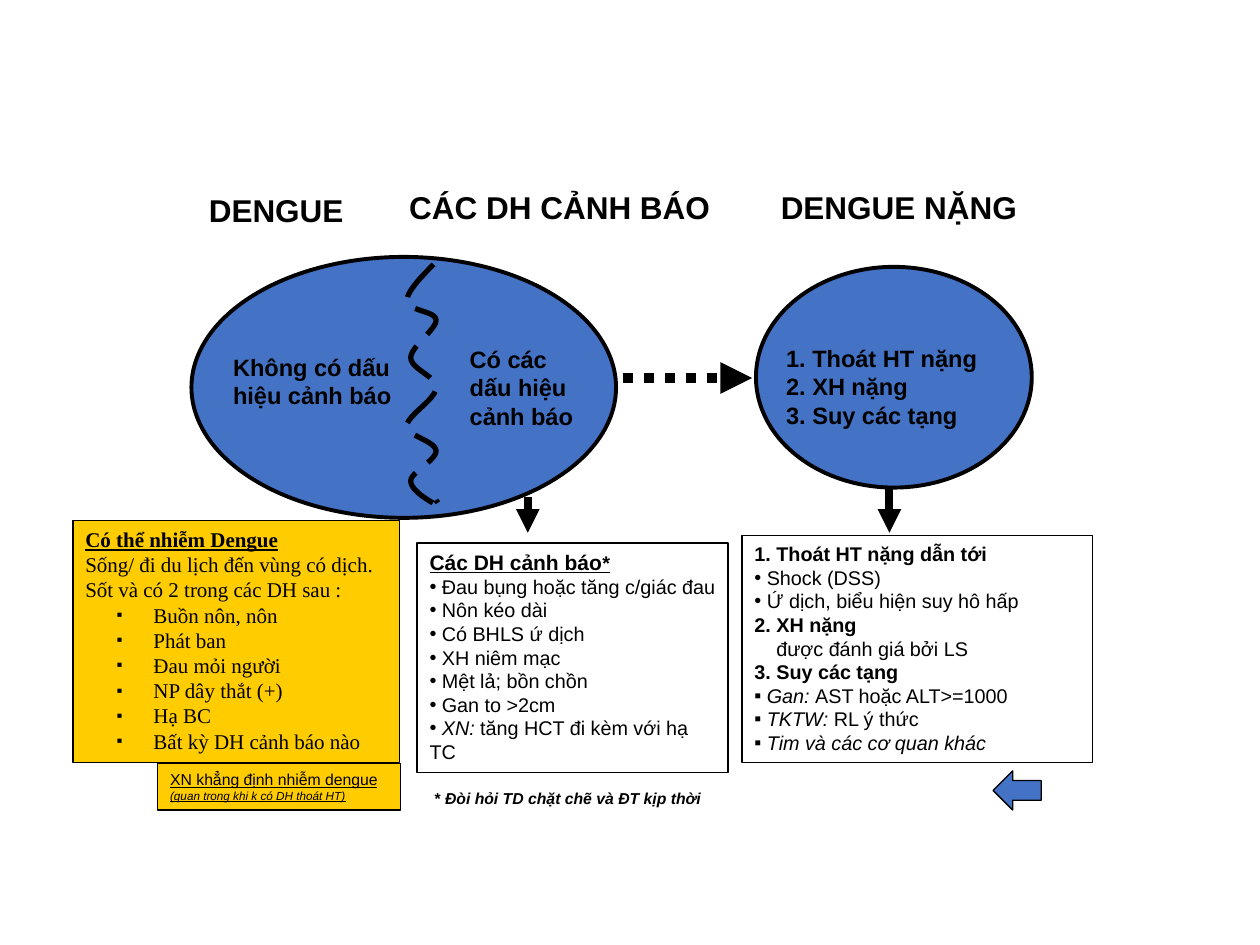
import lxml.etree
import pptx
import pptx.dml.color
import pptx.enum.dml
import pptx.enum.shapes
import pptx.enum.text
import pptx.oxml
import pptx.oxml.ns
import pptx.util

Cm = pptx.util.Cm
Pt = pptx.util.Pt
MSO_SHAPE = pptx.enum.shapes.MSO_SHAPE
LINE_DASH = pptx.enum.dml.MSO_LINE
BLACK = pptx.dml.color.RGBColor(0x00, 0x00, 0x00)
BLUE = pptx.dml.color.RGBColor(0x44, 0x72, 0xC4)
YELLOW = pptx.dml.color.RGBColor(0xFF, 0xCC, 0x00)

PLAIN = {}
BOLD = {"bold": True}
ITALIC = {"italic": True}
HEADING = {"bold": True, "underline": True, "size": Pt(12)}


def write_text(shape, paragraphs, base, wrap=True):
    """Each paragraph is (bullet, left margin, first-line indent, runs)."""
    frame = shape.text_frame
    frame.word_wrap = wrap
    frame.auto_size = pptx.enum.text.MSO_AUTO_SIZE.SHAPE_TO_FIT_TEXT
    frame.vertical_anchor = pptx.enum.text.MSO_ANCHOR.TOP
    for index, (bullet, margin, indent, runs) in enumerate(paragraphs):
        paragraph = frame.paragraphs[0] if index == 0 else frame.add_paragraph()
        paragraph.alignment = pptx.enum.text.PP_ALIGN.LEFT
        properties = paragraph._p.get_or_add_pPr()
        properties.set("marL", str(Cm(margin)))
        properties.set("indent", str(Cm(indent)))
        if bullet:
            if margin:
                size = lxml.etree.SubElement(properties, pptx.oxml.ns.qn("a:buSzPct"))
                size.set("val", "80000")
            font = lxml.etree.SubElement(properties, pptx.oxml.ns.qn("a:buFont"))
            font.set("typeface", "Arial")
            mark = lxml.etree.SubElement(properties, pptx.oxml.ns.qn("a:buChar"))
            mark.set("char", bullet)
        for text, changes in runs:
            run = paragraph.add_run()
            run.text = text
            run.font.color.rgb = BLACK
            for name, value in {**base, **changes}.items():
                setattr(run.font, name, value)


def add_outlined(kind, box, fill, width):
    shape = slide.shapes.add_shape(kind, *map(Cm, box))
    shape.shadow.inherit = False
    if fill is None:
        shape.fill.background()
    else:
        shape.fill.solid()
        shape.fill.fore_color.rgb = fill
    shape.line.color.rgb = BLACK
    shape.line.width = Pt(width)
    return shape


presentation = pptx.Presentation()
presentation.slide_width = Cm(25.4)
presentation.slide_height = Cm(19.05)
slide = presentation.slides.add_slide(presentation.slide_layouts[6])

# Ellipses for dengue and severe dengue
for box in [(3.86, 5.18, 8.56, 5.26), (15.24, 5.38, 5.56, 4.45)]:
    add_outlined(MSO_SHAPE.OVAL, box, BLUE, 2.25)

# Wavy divider: cubic curves as (control, control, end)
start = (8.74, 5.33)
curves = [
    ((8.46, 5.61), (8.2, 5.89), (8.2, 6.07)),
    ((8.23, 6.27), (8.79, 6.27), (8.79, 6.45)),
    ((8.81, 6.63), (8.28, 6.99), (8.28, 7.21)),
    ((8.28, 7.44), (8.81, 7.59), (8.79, 7.82)),
    ((8.79, 8.05), (8.2, 8.38), (8.2, 8.59)),
    ((8.2, 8.79), (8.79, 8.89), (8.79, 9.09)),
    ((8.81, 9.27), (8.26, 9.53), (8.28, 9.7)),
    ((8.28, 9.91), (8.76, 10.16), (8.86, 10.21)),
    ((8.94, 10.29), (8.86, 10.19), (8.79, 10.08)),
]
steps = 12
points = []
corner = start
for first, second, end in curves:
    for step in range(1, steps + 1):
        t = step / steps
        weights = ((1 - t) ** 3, 3 * t * (1 - t) ** 2, 3 * t * t * (1 - t), t ** 3)
        points.append(tuple(
            Cm(sum(w * value for w, value in zip(weights, values)))
            for values in zip(corner, first, second, end)))
    corner = end
builder = slide.shapes.build_freeform(Cm(start[0]), Cm(start[1]))
builder.add_line_segments(points, close=False)
divider = builder.convert_to_shape()
divider.shadow.inherit = False
divider.fill.background()
divider.line.color.rgb = BLACK
divider.line.width = Pt(3)
divider.line.dash_style = LINE_DASH.LONG_DASH

# Arrows
for ends, width, dash in [
    ((12.55, 7.62, 15.16, 7.62), 6, LINE_DASH.ROUND_DOT),
    ((10.64, 10.01, 10.64, 10.74), 4.5, None),
    ((17.93, 9.86, 17.93, 10.74), 4.5, None),
]:
    arrow = slide.shapes.add_connector(
        pptx.enum.shapes.MSO_CONNECTOR.STRAIGHT, *map(Cm, ends))
    arrow.line.color.rgb = BLACK
    arrow.line.width = Pt(width)
    if dash:
        arrow.line.dash_style = dash
        preset = arrow.line._ln.find(pptx.oxml.ns.qn("a:prstDash"))
        preset.set("val", "sysDot")
    head = lxml.etree.SubElement(arrow.line._ln, pptx.oxml.ns.qn("a:tailEnd"))
    head.set("type", "triangle")
    lxml.etree.SubElement(arrow._element.spPr, pptx.oxml.ns.qn("a:effectLst"))

# Column titles and ellipse labels
for box, size, wrap, lines in [
    ((15.49, 3.66, 5.72, 1.02), 18, True, ["DENGUE NẶNG"]),
    ((3.96, 3.73, 3.33, 1.02), 18, True, ["DENGUE"]),
    ((8, 3.66, 6.63, 1.02), 18, False, ["CÁC DH CẢNH BÁO"]),
    ((15.6, 6.81, 5.21, 1.98), 13.5, True,
     ["1. Thoát HT nặng", "2. XH nặng", "3. Suy các tạng"]),
    ((4.45, 6.99, 3.96, 1.42), 13.5, True, ["Không có dấu hiệu cảnh báo"]),
    ((9.22, 6.83, 2.79, 1.98), 13.5, True, ["Có các dấu hiệu cảnh báo"]),
]:
    label = slide.shapes.add_textbox(*map(Cm, box))
    write_text(label, [("", 0, 0, [(line, PLAIN)]) for line in lines],
               {"name": "Arial", "size": Pt(size), "bold": True}, wrap)

# Warning signs
body = {"name": "Arial", "size": Pt(11.25)}
signs = ["Đau bụng hoặc tăng c/giác đau", "Nôn kéo dài", "Có BHLS ứ dịch",
         "XH niêm mạc", "Mệt lả; bồn chồn", "Gan to >2cm"]
warning = add_outlined(MSO_SHAPE.RECTANGLE, (8.41, 10.95, 6.27, 4.62), None, 0.75)
write_text(warning, [
    ("", 0, 0, [("Các DH cảnh báo", HEADING), ("*", {**HEADING, "size": Pt(11.25)})]),
    *[("•", 0, 0, [(" " + sign, PLAIN)]) for sign in signs],
    ("•", 0, 0, [(" XN:", ITALIC), (" tăng HCT đi kèm với hạ TC", PLAIN)]),
], body)

# Severe dengue
severe = add_outlined(MSO_SHAPE.RECTANGLE, (14.96, 10.8, 7.06, 4.57), None, 0.75)
write_text(severe, [
    ("", 0, 0, [("1. Thoát HT nặng dẫn tới", BOLD)]),
    ("•", 0, 0, [(" Shock (DSS)", PLAIN)]),
    ("•", 0, 0, [(" Ứ dịch, biểu hiện suy hô hấp", PLAIN)]),
    ("", 0, 0, [("2. XH nặng", BOLD)]),
    ("", 0.44, 0, [("được đánh giá bởi LS", PLAIN)]),
    ("", 0, 0, [("3. Suy các tạng", BOLD)]),
    ("▪", 0, 0, [(" Gan: ", ITALIC), ("AST hoặc ALT>=1000", PLAIN)]),
    ("▪", 0, 0, [(" TKTW: ", ITALIC), ("RL ý thức", PLAIN)]),
    ("▪", 0, 0, [(" Tim và các cơ quan khác", ITALIC)]),
], body)

# Probable dengue
symptoms = ["Buồn nôn, nôn", "Phát ban", "Đau mỏi người", "NP dây thắt (+)",
            "Hạ BC", "Bất kỳ DH cảnh báo nào"]
probable = add_outlined(MSO_SHAPE.RECTANGLE, (1.47, 10.49, 6.58, 4.88), YELLOW, 0.75)
write_text(probable, [
    ("", 0, 0, [("Có thể nhiễm Dengue", HEADING)]),
    ("", 0, 0, [("Sống/ đi du lịch đến vùng có dịch. Sốt và có 2 trong các DH sau :", PLAIN)]),
    *[("▪", 1.27, -0.64, [(" " + symptom, PLAIN)]) for symptom in symptoms],
], {"name": "Times New Roman", "size": Pt(12)})

# Footnote, laboratory confirmation and back arrow
small = {"name": "Arial", "size": Pt(9)}
footnote = slide.shapes.add_textbox(Cm(8.51), Cm(15.77), Cm(5.92), Cm(0.64))
write_text(footnote, [("", 0, 0, [
    ("* ", BOLD),
    ("Đòi hỏi TD chặt chẽ và ĐT kịp thời", {**BOLD, **ITALIC})])], small, False)

laboratory = add_outlined(MSO_SHAPE.RECTANGLE, (3.18, 15.39, 4.9, 0.94), YELLOW, 0.75)
write_text(laboratory, [
    ("", 0, 0, [("XN khẳng định nhiễm dengue", PLAIN)]),
    ("", 0, 0, [("(quan trọng khi k có DH thoát HT)", {**ITALIC, "size": Pt(6.75)})]),
], {**small, "underline": True})

add_outlined(MSO_SHAPE.LEFT_ARROW, (20.02, 15.54, 0.97, 0.79), BLUE, 0.75)

presentation.save("out.pptx")
